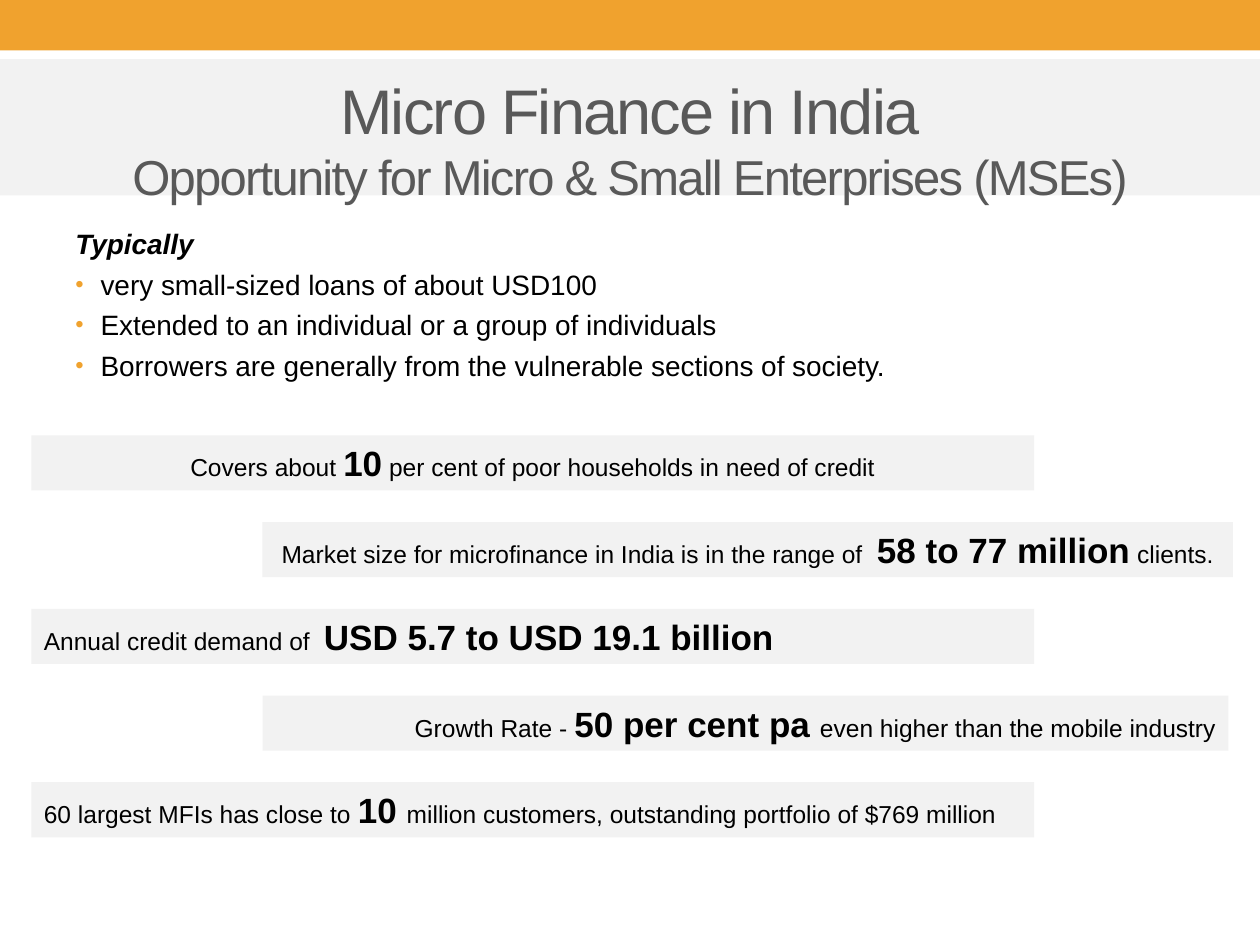
from pptx import Presentation
from pptx.dml.color import RGBColor
from pptx.enum.shapes import MSO_SHAPE as Shape
from pptx.enum.text import MSO_ANCHOR as Anchor, PP_ALIGN as Align
from pptx.oxml.ns import qn
from pptx.util import Pt
from lxml.etree import SubElement

ORANGE, GREY, DARK, BLACK = "F0A22E", "F2F2F2", "595959", "000000"


def color(code):
    return RGBColor.from_string(code)


class Deck:
    face = "Arial"

    def __init__(self, wide, high):
        self.prs = Presentation()
        self.prs.slide_width, self.prs.slide_height = Pt(wide), Pt(high)
        self.slide = self.prs.slides.add_slide(self.prs.slide_layouts[6])

    def style(self, font, size, tone=BLACK, bold=False):
        font.name, font.size, font.bold = self.face, Pt(size), bold
        font.color.rgb = color(tone)

    def rect(self, x, y, w, h, fill):
        box = self.slide.shapes.add_shape(
            Shape.RECTANGLE, Pt(x), Pt(y), Pt(w), Pt(h))
        box.shadow.inherit = False
        box.fill.solid()
        box.fill.fore_color.rgb = color(fill)
        box.line.fill.background()
        return box.text_frame

    def title(self, x, y, w, h, lines):
        frame = self.rect(x, y, w, h, GREY)
        frame.vertical_anchor = Anchor.TOP
        frame.margin_top = Pt(7)
        for i, (text, size) in enumerate(lines):
            para = frame.add_paragraph() if i else frame.paragraphs[0]
            para.alignment = Align.CENTER
            run = para.add_run()
            run.text = text
            self.style(para.font, size, DARK)
            run.font._element.set("spc", "-100")

    def bullet(self, para):
        props = para._p.get_or_add_pPr()
        props.set("marL", str(Pt(14.4)))
        props.set("indent", str(Pt(-14.4)))
        tone = SubElement(props, qn("a:buClr"))
        SubElement(tone, qn("a:srgbClr"), val=ORANGE)
        SubElement(props, qn("a:buSzPct"), val="85000")
        SubElement(props, qn("a:buFont"), typeface=self.face)
        SubElement(props, qn("a:buChar"), char="•")

    def points(self, x, y, w, h, head, items):
        frame = self.slide.shapes.add_textbox(
            Pt(x), Pt(y), Pt(w), Pt(h)).text_frame
        frame.word_wrap = True
        first = frame.paragraphs[0]
        first.text = head
        self.style(first.font, 16, bold=True)
        first.font.italic = True
        for item in items:
            para = frame.add_paragraph()
            para.text = item
            para.space_before = Pt(4)
            self.bullet(para)
            self.style(para.font, 16)

    def fact(self, x, y, w, h, align, parts):
        frame = self.rect(x, y, w, h, GREY)
        frame.vertical_anchor = Anchor.MIDDLE
        para = frame.paragraphs[0]
        para.alignment = align
        # Every second part is the key figure
        for i, text in enumerate(parts):
            run = para.add_run()
            run.text = text
            key = i % 2 == 1
            self.style(run.font, 20 if key else 14, bold=key)


def main():
    deck = Deck(720, 540)

    # Top band and title
    deck.rect(0, 0, 720, 28.8, ORANGE)
    deck.title(0, 33.8, 720, 77.8, [
        ("Micro Finance in India", 36),
        ("Opportunity for Micro & Small Enterprises (MSEs)", 28)])

    # Typical loans
    deck.points(36, 126, 648, 123, "Typically", [
        "very small-sized loans of about USD100",
        "Extended to an individual or a group of individuals",
        "Borrowers are generally from the vulnerable sections of society."])

    # Staggered facts
    left, right = 18, 150
    facts = [
        (left, 573, Align.CENTER,
         ["Covers about ", "10",
          " per cent of poor households in need of credit"]),
        (right, 554.5, Align.RIGHT,
         ["Market size for microfinance in India is in the range of  ",
          "58 to 77 million", " clients. "]),
        (left, 573, Align.LEFT,
         ["Annual credit demand of  ", "USD 5.7 to USD 19.1 billion"]),
        (right, 552, Align.RIGHT,
         ["Growth Rate - ", "50 per cent pa ",
          "even higher than the mobile industry"]),
        (left, 573, Align.LEFT,
         ["60 largest MFIs has close to ", "10 ",
          "million customers, outstanding portfolio of $769 million"])]
    for i, (x, w, align, parts) in enumerate(facts):
        deck.fact(x, 248.8 + 49.55 * i, w, 31.5, align, parts)

    deck.prs.save("out.pptx")


if __name__ == "__main__":
    main()
